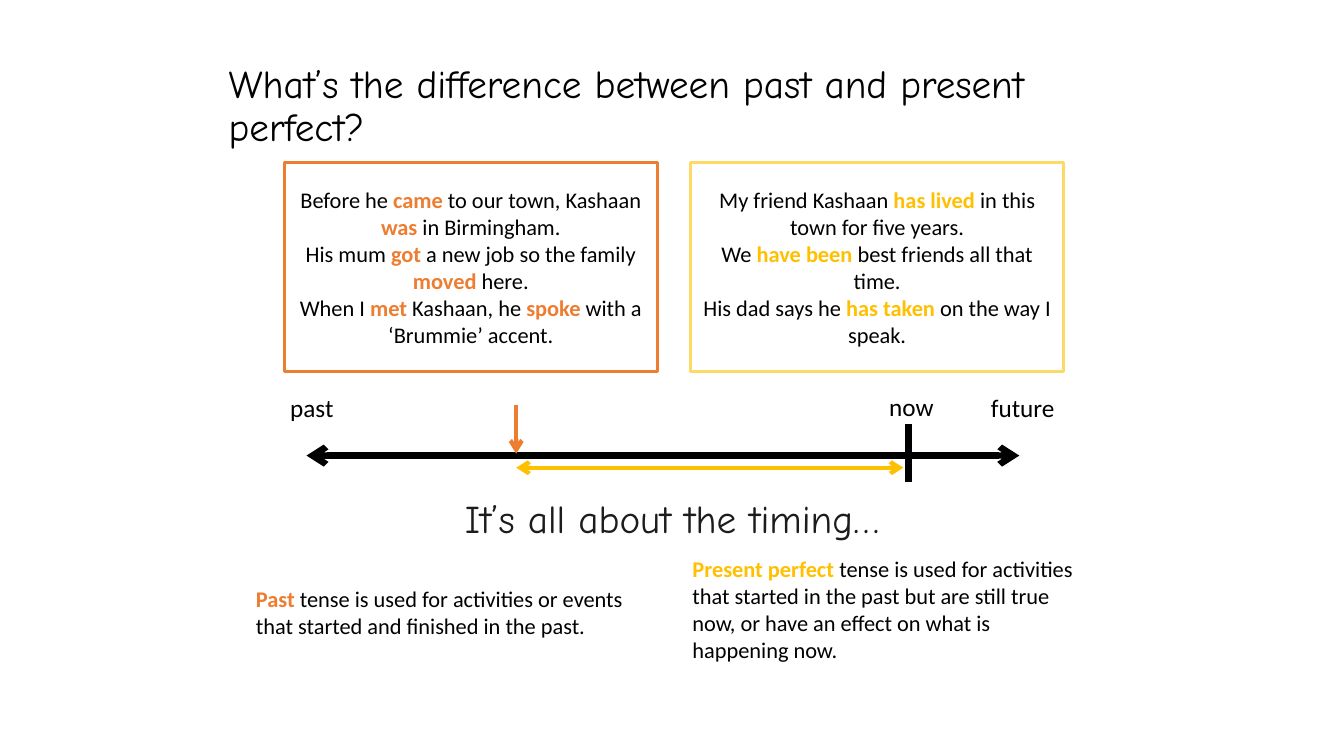
from dataclasses import dataclass

from lxml import etree
from pptx import Presentation
from pptx.dml.color import RGBColor
from pptx.enum.shapes import MSO_CONNECTOR, MSO_SHAPE
from pptx.enum.text import MSO_ANCHOR, PP_ALIGN
from pptx.oxml.ns import qn
from pptx.util import Inches, Pt

RECT = MSO_SHAPE.RECTANGLE
STRAIGHT = MSO_CONNECTOR.STRAIGHT
LEFT, CENTER = PP_ALIGN.LEFT, PP_ALIGN.CENTER
TOP, MIDDLE = MSO_ANCHOR.TOP, MSO_ANCHOR.MIDDLE

COLORS = {
    "black": "000000",
    "ink": "1C1C1C",
    "white": "FFFFFF",
    "past": "ED7D31",
    "perfect": "FFC000",
    "border": "FFD966",
}
BODY = {"name": "Calibri", "size": Pt(16)}
LABEL = {"name": "Calibri", "size": Pt(18)}
HEADING = {"name": "Comic Neue", "size": Pt(28)}


@dataclass
class Block:
    at: tuple[float, float, float, float]
    lines: list[str]
    font: dict
    color: str = "black"
    accent: str = "black"
    border: str | None = None
    align: int = LEFT
    anchor: int = TOP
    spacing: float = 1.0


@dataclass
class Line:
    start: tuple[float, float]
    end: tuple[float, float]
    color: str
    width: float
    ends: tuple[str, ...] = ()


BLOCKS = [
    Block((2.17, 0.52, 8.99, 1.09),
          ["What’s the difference between past and present perfect?"],
          HEADING, anchor=MIDDLE, spacing=0.9),
    Block((2.82, 1.61, 3.7, 2.08),
          ["Before he *came* to our town, Kashaan *was* in Birmingham.",
           "His mum *got* a new job so the family *moved* here.",
           "When I *met* Kashaan, he *spoke* with a ‘Brummie’ accent."],
          BODY, accent="past", border="past", align=CENTER, anchor=MIDDLE),
    Block((6.85, 1.61, 3.7, 2.08),
          ["My friend Kashaan *has lived* in this town for five years.",
           "We *have been* best friends all that time.",
           "His dad says he *has taken* on the way I speak."],
          BODY, accent="perfect", border="border", align=CENTER, anchor=MIDDLE),
    Block((2.78, 3.84, 0.77, 0.4), ["past"], LABEL),
    Block((9.73, 3.84, 0.94, 0.4), ["future"], LABEL),
    Block((8.72, 3.83, 0.68, 0.4), ["now"], LABEL),
    Block((2.17, 4.62, 8.99, 1.09), ["It’s all about the timing…"],
          HEADING, color="ink", align=CENTER, anchor=MIDDLE, spacing=0.9),
    Block((2.44, 5.76, 4.22, 0.64),
          ["*Past* tense is used for activities or events that started "
           "and finished in the past."],
          BODY, accent="past"),
    Block((6.77, 5.46, 4.07, 1.18),
          ["*Present perfect* tense is used for activities that started in "
           "the past but are still true now, or have an effect on what is "
           "happening now."],
          BODY, accent="perfect"),
]

LINES = [
    Line((3.04, 4.52), (10.11, 4.52), "black", 4.5, ("headEnd", "tailEnd")),
    Line((9.01, 4.21), (9.01, 4.78), "black", 4.5),
    Line((5.12, 4.64), (8.96, 4.64), "perfect", 3, ("headEnd", "tailEnd")),
    Line((5.12, 4.02), (5.12, 4.5), "past", 3, ("tailEnd",)),
]


def paint(name: str) -> RGBColor:
    return RGBColor.from_string(COLORS[name])


def draw_block(shapes, block: Block) -> None:
    place = [Inches(n) for n in block.at]
    if block.border:
        box = shapes.add_shape(RECT, *place)
        box.shadow.inherit = False
        box.fill.solid()
        box.fill.fore_color.rgb = paint("white")
        box.line.color.rgb = paint(block.border)
        box.line.width = Pt(2.25)
    else:
        box = shapes.add_textbox(*place)
    frame = box.text_frame
    frame.word_wrap = True
    frame.vertical_anchor = block.anchor
    for i, line in enumerate(block.lines):
        para = frame.add_paragraph() if i else frame.paragraphs[0]
        para.alignment = block.align
        para.line_spacing = block.spacing
        for j, part in enumerate(line.split("*")):
            if not part:
                continue
            strong = j % 2 == 1
            run = para.add_run()
            run.text = part
            for key, value in {**block.font, "bold": strong}.items():
                setattr(run.font, key, value)
            run.font.color.rgb = paint(block.accent if strong else block.color)


def draw_line(shapes, line: Line) -> None:
    points = [Inches(n) for n in line.start + line.end]
    link = shapes.add_connector(STRAIGHT, *points)
    link.line.color.rgb = paint(line.color)
    link.line.width = Pt(line.width)
    stroke = link.line._get_or_add_ln()
    for end in line.ends:
        etree.SubElement(stroke, qn(f"a:{end}"), type="arrow")
    etree.SubElement(link._element.spPr, qn("a:effectLst"))


def main() -> None:
    deck = Presentation()
    deck.slide_width = Inches(13.33)
    deck.slide_height = Inches(7.5)
    slide = deck.slides.add_slide(deck.slide_layouts[6])
    for block in BLOCKS:
        draw_block(slide.shapes, block)
    for line in LINES:
        draw_line(slide.shapes, line)
    deck.save("out.pptx")


if __name__ == "__main__":
    main()
